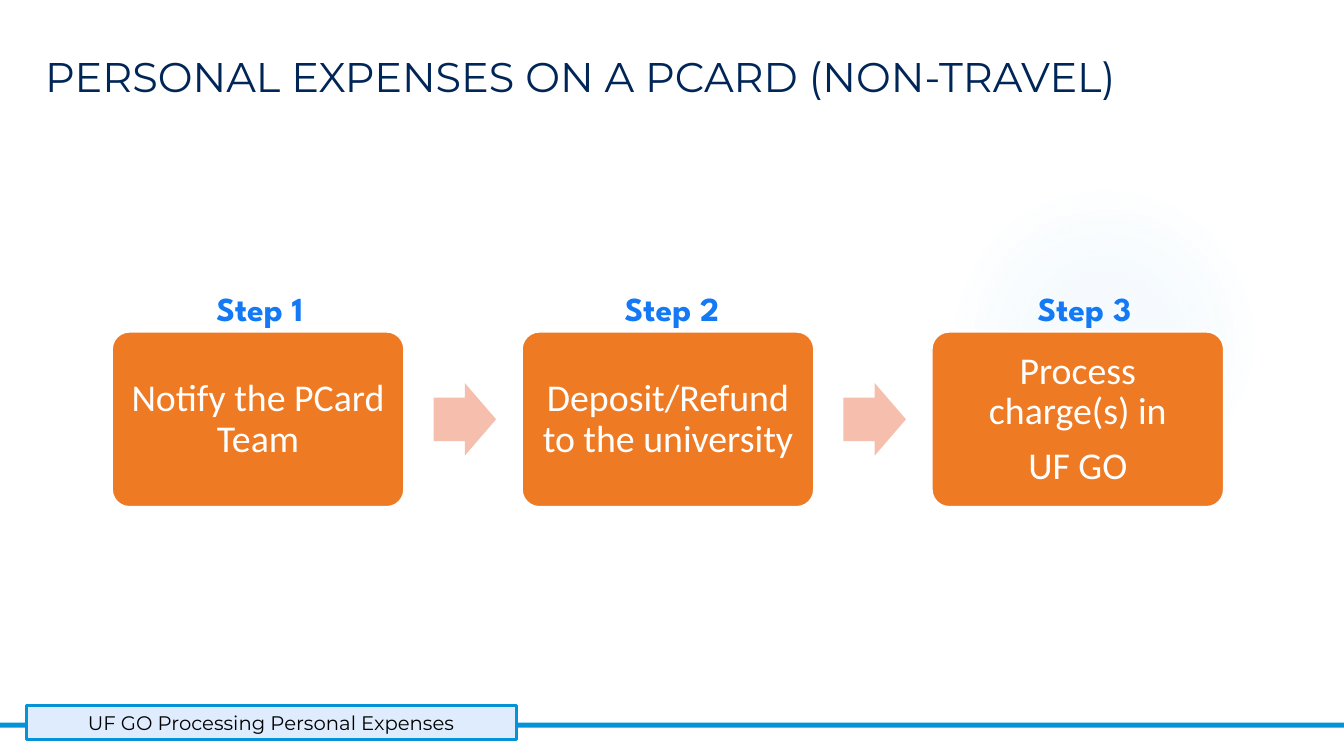
"""Build the slide on handling personal expenses charged to a PCard."""
import dataclasses
import typing

import lxml.etree
import pptx
import pptx.dml.color
import pptx.enum.shapes
import pptx.enum.text
import pptx.oxml.ns
import pptx.util

Inches = pptx.util.Inches
Pt = pptx.util.Pt
Shapes = pptx.enum.shapes.MSO_SHAPE
Align = pptx.enum.text.PP_ALIGN
Anchor = pptx.enum.text.MSO_ANCHOR

COLORS = {
    "glow": "7AC4F0",
    "navy": "002657",
    "rule": "0593D7",
    "footer": "DEECFD",
    "black": "000000",
    "white": "FFFFFF",
    "card": "EF7A24",
    "arrow": "F6BEAC",
    "step": "1379F5",
}
CARD_LEFT, CARD_TOP, CARD_WIDTH, CARD_HEIGHT = 1.11, 3.29, 2.9, 1.74
CARD_PITCH = 4.065
LABEL_LEFT, LABEL_PITCH = 1.14, 4.09
ARROW_OFFSET = 3.19


@dataclasses.dataclass(frozen=True)
class Box:
    left: float
    top: float
    width: float
    height: float

    def lengths(self) -> list[pptx.util.Length]:
        return [Inches(value) for value in dataclasses.astuple(self)]


@dataclasses.dataclass(frozen=True)
class TextStyle:
    font: str
    size: float
    color: str
    bold: bool = False
    align: typing.Any = Align.CENTER
    anchor: typing.Any = Anchor.MIDDLE
    inset: float = 0.1
    inset_y: float = 0.05
    line_spacing: float = 1.0
    space_after: float = 0


@dataclasses.dataclass(frozen=True)
class Step:
    label: str
    action: str


TITLE = TextStyle("Montserrat", 29.6, "navy", align=Align.LEFT, anchor=Anchor.TOP)
FOOTER = TextStyle("Montserrat", 14, "black")
LABEL = TextStyle("League Spartan", 24, "step", bold=True, anchor=Anchor.TOP)
ACTION = TextStyle("Calibri", 27, "white", inset=0.11, inset_y=0.11,
                   line_spacing=0.9, space_after=9.45)

STEPS = [
    Step("Step 1", "Notify the PCard Team"),
    Step("Step 2", "Deposit/Refund to the university"),
    Step("Step 3", "Process charge(s) in\nUF GO"),
]


def rgb(name: str) -> pptx.dml.color.RGBColor:
    return pptx.dml.color.RGBColor.from_string(COLORS[name])


def write(shape: typing.Any, text: str, style: TextStyle) -> None:
    frame = shape.text_frame
    frame.text = text
    frame.word_wrap = True
    frame.vertical_anchor = style.anchor
    frame.margin_left = frame.margin_right = Inches(style.inset)
    frame.margin_top = frame.margin_bottom = Inches(style.inset_y)
    for paragraph in frame.paragraphs:
        paragraph.alignment = style.align
        paragraph.line_spacing = style.line_spacing
        paragraph.space_after = Pt(style.space_after)
        for run in paragraph.runs:
            run.font.name = style.font
            run.font.size = Pt(style.size)
            run.font.bold = style.bold
            run.font.color.rgb = rgb(style.color)


def add_text(slide: typing.Any, box: Box, text: str, style: TextStyle) -> None:
    write(slide.shapes.add_textbox(*box.lengths()), text, style)


def add_block(slide: typing.Any, kind: typing.Any, box: Box, fill: str,
              line: str | None = None, line_width: float = 0,
              adjustments: tuple[float, ...] = ()) -> typing.Any:
    shape = slide.shapes.add_shape(kind, *box.lengths())
    shape.shadow.inherit = False
    shape.fill.solid()
    shape.fill.fore_color.rgb = rgb(fill)
    if line:
        shape.line.color.rgb = rgb(line)
        shape.line.width = Pt(line_width)
    else:
        shape.line.fill.background()
    for index, value in enumerate(adjustments):
        shape.adjustments[index] = value
    return shape


def add_glow(slide: typing.Any, box: Box) -> None:
    glow = add_block(slide, Shapes.OVAL, box, "glow")
    qn = pptx.oxml.ns.qn
    solid = glow.element.spPr.find(qn("a:solidFill"))
    gradient = lxml.etree.Element(qn("a:gradFill"), rotWithShape="1")
    stops = lxml.etree.SubElement(gradient, qn("a:gsLst"))
    for position, opacity in ((0, 7), (36, 6), (69, 0)):
        stop = lxml.etree.SubElement(stops, qn("a:gs"), pos=str(position * 1000))
        color = lxml.etree.SubElement(stop, qn("a:srgbClr"), val=COLORS["glow"])
        lxml.etree.SubElement(color, qn("a:alpha"), val=str(opacity * 1000))
    circle = lxml.etree.SubElement(gradient, qn("a:path"), path="circle")
    center = dict.fromkeys(("l", "t", "r", "b"), "50000")
    lxml.etree.SubElement(circle, qn("a:fillToRect"), center)
    solid.getparent().replace(solid, gradient)


def add_step(slide: typing.Any, index: int, step: Step) -> None:
    left = CARD_LEFT + index * CARD_PITCH
    card = add_block(slide, Shapes.ROUNDED_RECTANGLE,
                     Box(left, CARD_TOP, CARD_WIDTH, CARD_HEIGHT),
                     "card", "white", 1.5, (0.1,))
    write(card, step.action, ACTION)
    add_text(slide, Box(LABEL_LEFT + index * LABEL_PITCH, 2.81, 2.87, 0.5),
             step.label, LABEL)
    if index < len(STEPS) - 1:
        add_block(slide, Shapes.RIGHT_ARROW, Box(left + ARROW_OFFSET, 3.8, 0.62, 0.72),
                  "arrow", adjustments=(0.6, 0.5))


def main() -> None:
    deck = pptx.Presentation()
    deck.slide_width, deck.slide_height = Inches(13.33), Inches(7.5)
    slide = deck.slides.add_slide(deck.slide_layouts[6])
    add_glow(slide, Box(9.41, 1.83, 3.08, 3.08))
    add_text(slide, Box(0.35, 0.46, 12.55, 0.66),
             "PERSONAL EXPENSES ON A PCARD (NON-TRAVEL)", TITLE)
    add_block(slide, Shapes.RECTANGLE, Box(0, 7.17, 13.33, 0.05), "rule")
    footer = add_block(slide, Shapes.RECTANGLE, Box(0.26, 7, 4.86, 0.34),
                       "footer", "rule", 2.25)
    write(footer, "UF GO Processing Personal Expenses", FOOTER)
    for index, step in enumerate(STEPS):
        add_step(slide, index, step)
    deck.save("out.pptx")


if __name__ == "__main__":
    main()
